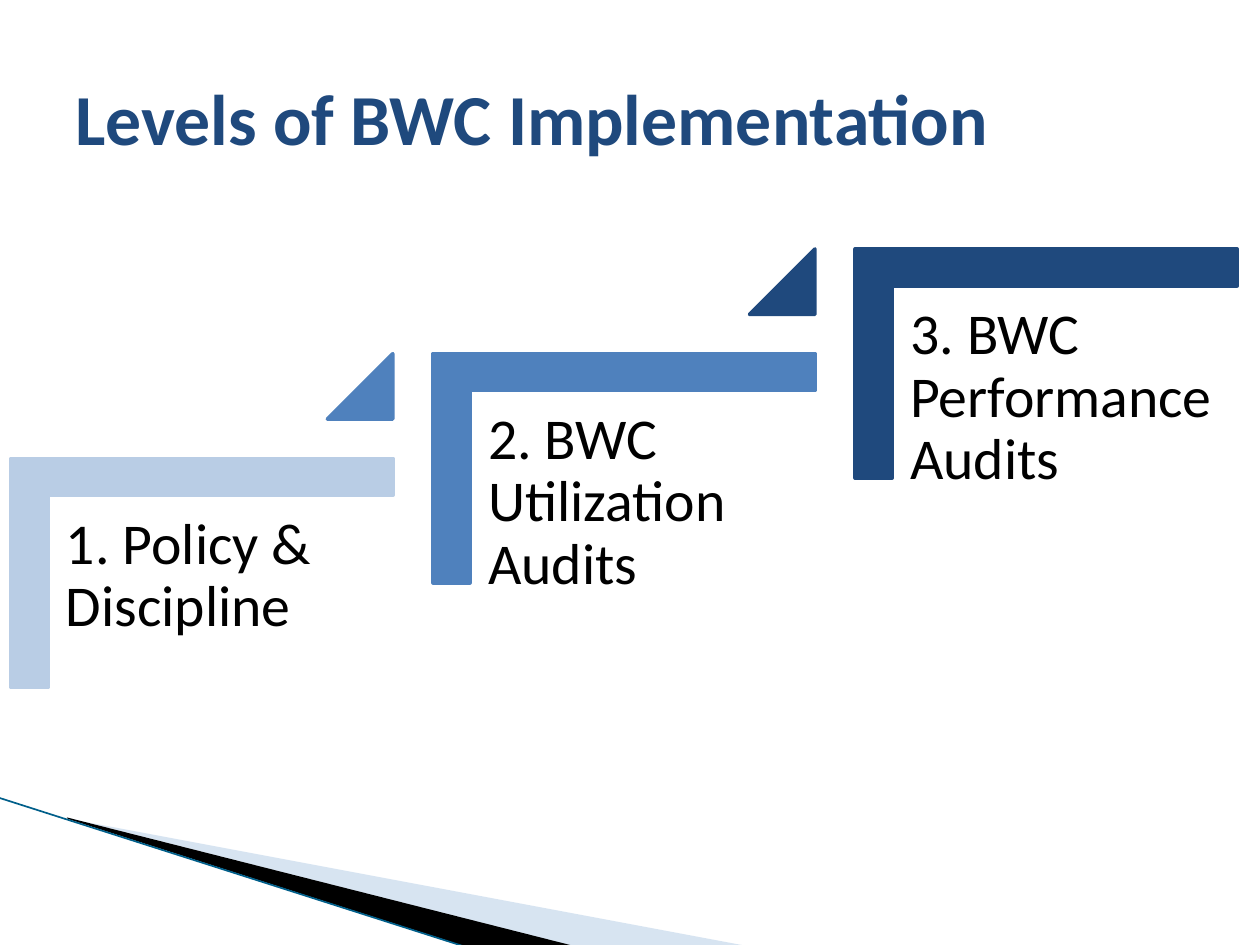
from lxml.etree import SubElement
from pptx import Presentation
from pptx.dml.color import RGBColor
from pptx.enum.shapes import MSO_CONNECTOR, MSO_SHAPE
from pptx.enum.text import MSO_ANCHOR
from pptx.oxml.ns import qn
from pptx.util import Cm, Pt

NAVY = RGBColor(0x1F, 0x49, 0x7D)
BLUE = RGBColor(0x4F, 0x81, 0xBD)
PALE_BLUE = RGBColor(0xB9, 0xCD, 0xE5)
MIST = RGBColor(0x9D, 0xBD, 0xDE)
TEAL = RGBColor(0x00, 0x5F, 0x8A)
BLACK = RGBColor(0, 0, 0)

LEVELS = [
    ("1. Policy & Discipline", PALE_BLUE),
    ("2. BWC Utilization Audits", BLUE),
    ("3. BWC Performance Audits", NAVY),
]


def add_text(slide, text, left, top, width, height, *, size, color=BLACK,
             bold=False, anchor=MSO_ANCHOR.TOP, inset=None, spacing=None):
    box = slide.shapes.add_textbox(Cm(left), Cm(top), Cm(width), Cm(height))
    frame = box.text_frame
    frame.word_wrap = True
    frame.vertical_anchor = anchor
    if inset is not None:
        frame.margin_left = frame.margin_right = Cm(inset)
        frame.margin_top = frame.margin_bottom = Cm(inset)
    paragraph = frame.paragraphs[0]
    paragraph.line_spacing = spacing
    run = paragraph.add_run()
    run.text = text
    run.font.name = "Calibri"
    run.font.size = Pt(size)
    run.font.bold = bold
    run.font.color.rgb = color


def paint(shape, color, line_width=None):
    shape.shadow.inherit = False
    shape.fill.solid()
    shape.fill.fore_color.rgb = color
    if line_width:
        shape.line.color.rgb = color
        shape.line.width = Pt(line_width)
    else:
        shape.line.fill.background()


def add_wedge(slide, left, top, points, color, opacity=None):
    corners = [(Cm(left + x), Cm(top + y)) for x, y in points]
    builder = slide.shapes.build_freeform(*corners[0])
    builder.add_line_segments(corners[1:], close=True)
    wedge = builder.convert_to_shape()
    paint(wedge, color)
    if opacity is not None:
        tint = wedge._element.spPr.find(qn("a:solidFill"))[0]
        SubElement(tint, qn("a:alpha")).set("val", str(opacity * 1000))


def add_swoosh(slide, left, top):
    """Draw the corner decoration from the point where its edge line starts."""
    add_wedge(slide, left, top,
              [(1.43, 0.43), (15.14, 3), (11.61, 3), (1.43, 0.41)], MIST, 40)
    add_wedge(slide, left, top,
              [(1.38, 0.4), (11.64, 3), (9.48, 3.02), (1.4, 0.43)], BLACK)
    edge = slide.shapes.add_connector(MSO_CONNECTOR.STRAIGHT, Cm(left), Cm(top),
                                      Cm(left + 9.45), Cm(top + 3.02))
    edge.line.color.rgb = TEAL
    edge.line.width = Pt(0.95)
    SubElement(edge._element.spPr, qn("a:effectLst"))


def add_step(slide, left, top, width, height, label, color):
    # The bracket is turned a quarter, so its unrotated frame swaps the sides.
    bracket = slide.shapes.add_shape(
        MSO_SHAPE.CORNER, Cm(left + (width - height) / 2),
        Cm(top + (height - width) / 2), Cm(height), Cm(width))
    bracket.rotation = 90
    bracket.adjustments[0] = bracket.adjustments[1] = 0.161
    paint(bracket, color, 2)
    add_text(slide, label, left + 0.75, top + 0.77, width - 0.74, 6.1,
             size=33, inset=0.36, spacing=0.9)


def add_rise_marker(slide, left, top, side, color):
    marker = slide.shapes.add_shape(MSO_SHAPE.ISOSCELES_TRIANGLE,
                                    Cm(left), Cm(top), Cm(side), Cm(side))
    marker.adjustments[0] = 1
    paint(marker, color, 2)


def add_staircase(slide, left, top, levels, width=7.7, height=4.62,
                  run=8.51, rise=2.11, marker=1.32):
    """Place the levels upwards from the top left corner of the lowest one."""
    for index, (label, color) in enumerate(levels):
        x, y = left + index * run, top - index * rise
        if index:
            add_rise_marker(slide, x - run + width - marker, y, marker, color)
        add_step(slide, x, y, width, height, label, color)


def main():
    deck = Presentation()
    deck.slide_width, deck.slide_height = Cm(25.4), Cm(19.05)
    slide = deck.slides.add_slide(deck.slide_layouts[6])
    add_swoosh(slide, -0.03, 16.08)
    add_text(slide, "Levels of BWC Implementation", 1.27, 0.76, 22.86, 3.18,
             size=41, color=NAVY, bold=True, anchor=MSO_ANCHOR.MIDDLE)
    add_staircase(slide, 0.22, 9.24, LEVELS)
    deck.save("out.pptx")


if __name__ == "__main__":
    main()
